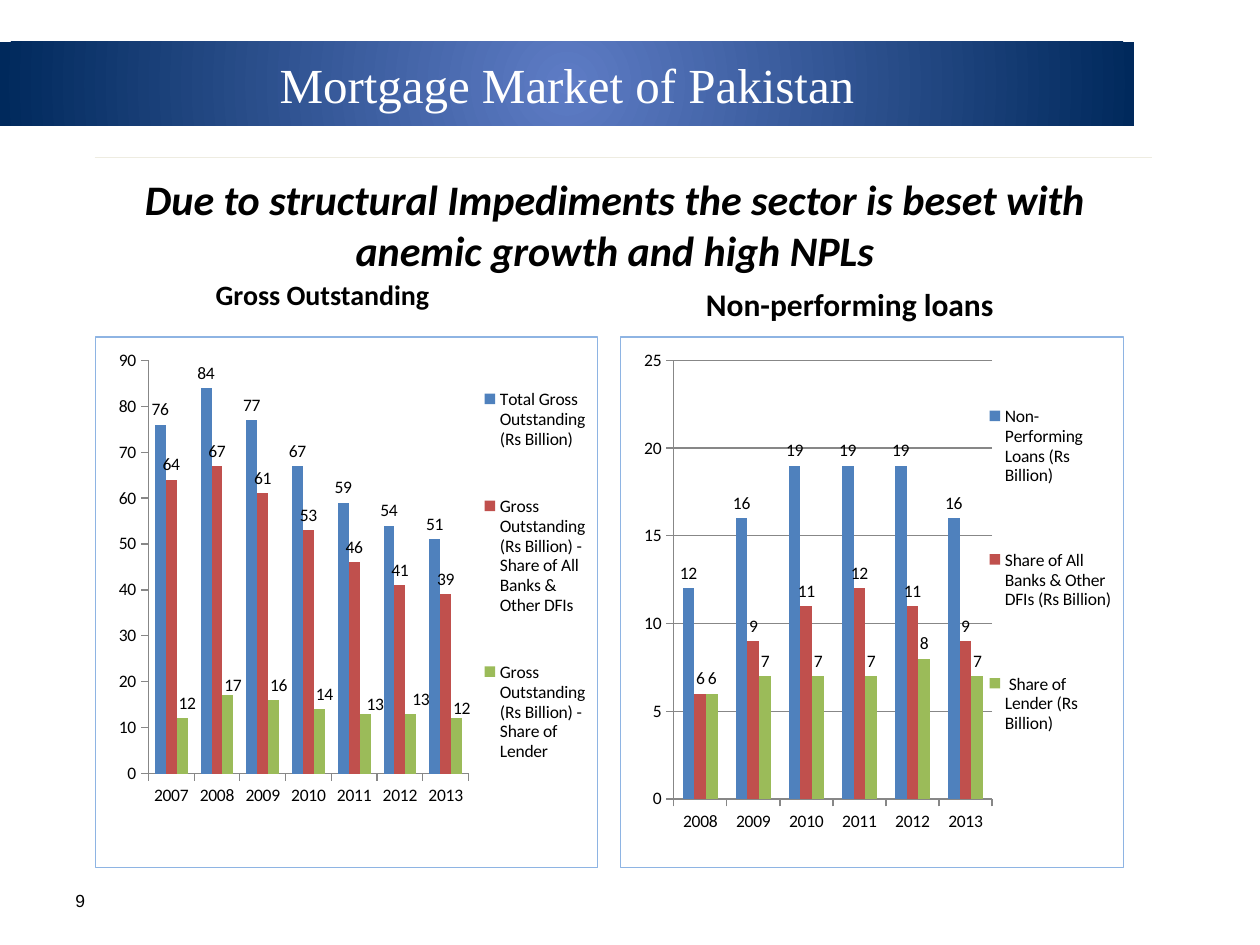
import pptx
import pptx.chart.data
import pptx.dml.color
import pptx.enum.chart
import pptx.enum.shapes
import pptx.enum.text
import pptx.oxml
import pptx.oxml.ns
import pptx.util
from lxml import etree
from pptx.util import Inches

COLORS = {
    "text": "000000", "white": "FFFFFF", "rule": "EEECE1", "axis": "878787",
    "border": "8EB4E3", "banner_center": "5E7CC5", "banner_edge": "00295C",
    "total": "4F81BD", "banks": "C0504D", "lender": "9BBB59",
}
SERIES_COLORS = ("total", "banks", "lender")
NAMESPACES = " ".join(pptx.oxml.ns.nsdecls(prefix) for prefix in ("a", "c"))
LEFT = pptx.enum.text.PP_ALIGN.LEFT
CENTER = pptx.enum.text.PP_ALIGN.CENTER


def color(name):
    return pptx.dml.color.RGBColor.from_string(COLORS[name])


def style_font(font, size, name="Calibri", tone="text", bold=False, italic=False):
    font.size = pptx.util.Pt(size)
    font.name = name
    font.color.rgb = color(tone)
    font.bold = bold
    font.italic = italic


def style_line(line, tone):
    line.color.rgb = color(tone)
    line.width = pptx.util.Pt(0.75)


def write_text(box, text, size, align=CENTER, middle=True, **font):
    frame = box.text_frame
    frame.word_wrap = True
    anchors = pptx.enum.text.MSO_ANCHOR
    frame.vertical_anchor = anchors.MIDDLE if middle else anchors.TOP
    frame.text = text
    paragraph = frame.paragraphs[0]
    paragraph.alignment = align
    style_font(paragraph.font, size, **font)


def add_text(page, area, text, size, **options):
    box = page.shapes.add_textbox(*map(Inches, area))
    write_text(box, text, size, **options)


def add_banner(page, text):
    banner = page.shapes.title
    banner.left, banner.top, banner.width, banner.height = map(Inches, (0, 0.33, 9, 0.67))
    banner.line.fill.background()
    banner.fill.gradient()
    for stop, tone in zip(banner.fill.gradient_stops, ("banner_center", "banner_edge")):
        stop.color.rgb = color(tone)
    linear = banner.element.spPr.find(".//" + pptx.oxml.ns.qn("a:lin"))
    linear.getparent().replace(linear, pptx.oxml.parse_xml(
        f'<a:path {NAMESPACES} path="circle">'
        '<a:fillToRect l="50000" t="50000" r="50000" b="50000"/></a:path>'))
    write_text(banner, text, 28, name="Times New Roman", tone="white")


def add_rule(page):
    rule = page.shapes.add_connector(
        pptx.enum.shapes.MSO_CONNECTOR.STRAIGHT, *map(Inches, (0.75, 1.25, 9.14, 1.25)))
    style_line(rule.line, "rule")
    etree.SubElement(rule.element.spPr, pptx.oxml.ns.qn("a:effectLst"))


def set_layout(parent, index, **settings):
    for old in parent.findall(pptx.oxml.ns.qn("c:layout")):
        parent.remove(old)
    values = "".join(f'<c:{key} val="{value}"/>' for key, value in settings.items())
    parent.insert(index, pptx.oxml.parse_xml(
        f"<c:layout {NAMESPACES}><c:manualLayout>{values}</c:manualLayout></c:layout>"))


def add_border(chart):
    chart.element.find(pptx.oxml.ns.qn("c:chart")).addnext(pptx.oxml.parse_xml(
        f'<c:spPr {NAMESPACES}><a:noFill/><a:ln w="9525"><a:solidFill>'
        f'<a:srgbClr val="{COLORS["border"]}"/></a:solidFill></a:ln></c:spPr>'))


def style_axes(chart, maximum, step, grid):
    for axis in (chart.category_axis, chart.value_axis):
        style_line(axis.format.line, "axis")
        axis.major_tick_mark = pptx.enum.chart.XL_TICK_MARK.OUTSIDE
    axis = chart.value_axis
    axis.minimum_scale = 0
    axis.maximum_scale = maximum
    axis.major_unit = step
    axis.tick_labels.number_format = "0"
    axis.tick_labels.number_format_is_linked = False
    axis.has_major_gridlines = grid
    if grid:
        style_line(axis.major_gridlines.format.line, "axis")


def shift_labels(series, offsets):
    for index, (x, y) in enumerate(offsets):
        label = series.points[index].data_label
        label.position = pptx.enum.chart.XL_LABEL_POSITION.OUTSIDE_END
        entry = series.data_labels._element.findall(pptx.oxml.ns.qn("c:dLbl"))[index]
        set_layout(entry, 1, x=x, y=y)


def add_columns(page, left, years, rows, gap, plot_size, legend, scale, grid):
    data = pptx.chart.data.CategoryChartData(number_format="0")
    data.categories = [str(year) for year in years]
    for name, values in rows:
        data.add_series(name, values)
    chart = page.shapes.add_chart(
        pptx.enum.chart.XL_CHART_TYPE.COLUMN_CLUSTERED,
        *map(Inches, (left, 2.67, 4, 4.22)), data).chart
    chart.has_title = False
    style_font(chart.font, 10)
    add_border(chart)
    style_axes(chart, *scale, grid)

    plot = chart.plots[0]
    plot.gap_width = gap
    plot.overlap = 0
    plot.vary_by_categories = False
    for series, tone in zip(plot.series, SERIES_COLORS):
        series.format.fill.solid()
        series.format.fill.fore_color.rgb = color(tone)
        labels = series.data_labels
        labels.show_value = True
        labels.number_format = "#,##0"
        labels.number_format_is_linked = False
        labels.position = pptx.enum.chart.XL_LABEL_POSITION.OUTSIDE_END

    plot_area = chart.element.find(".//" + pptx.oxml.ns.qn("c:plotArea"))
    set_layout(plot_area, 0, layoutTarget="inner", xMode="edge", yMode="edge",
               x=0.106, y=0.044, w=plot_size[0], h=plot_size[1])
    chart.has_legend = True
    chart.legend.position = pptx.enum.chart.XL_LEGEND_POSITION.RIGHT
    chart.legend.include_in_layout = False
    x, width, height = legend
    set_layout(chart.legend._element, 1, xMode="edge", yMode="edge",
               x=x, y=0.01, w=width, h=height)
    return chart


def main():
    deck = pptx.Presentation()
    deck.slide_width, deck.slide_height = Inches(10), Inches(7.5)
    page = deck.slides.add_slide(deck.slide_layouts[5])
    add_rule(page)
    add_text(page, (0.5, 6.95, 2.33, 0.4), "9", 10, align=LEFT, name="Arial")

    outstanding = add_columns(
        page, 0.75, range(2007, 2014), [
            ("Total Gross Outstanding (Rs Billion)", (76, 84, 77, 67, 59, 54, 51)),
            ("Gross Outstanding (Rs Billion) - Share of All Banks & Other DFIs",
             (64, 67, 61, 53, 46, 41, 39)),
            ("Gross Outstanding (Rs Billion) - Share of Lender",
             (12, 17, 16, 14, 13, 13, 12)),
        ], 116, (0.637, 0.779), (0.76, 0.23, 0.88), (90, 10), False)
    shift_labels(outstanding.plots[0].series[2], [
        (0.01, 0), (0.01, 0.01), (0.01, 0), (0.01, 0),
        (0.02, 0.01), (0.02, 0), (0.01, 0.01)])
    add_columns(
        page, 4.92, range(2008, 2014), [
            ("Non-Performing Loans (Rs Billion)", (12, 16, 19, 19, 19, 16)),
            ("Share of All Banks & Other DFIs (Rs Billion)", (6, 9, 11, 12, 11, 9)),
            (" Share of Lender (Rs Billion)", (6, 7, 7, 7, 8, 7)),
        ], 150, (0.633, 0.827), (0.73, 0.25, 0.86), (25, 5), True)

    add_text(page, (0.92, 2.17, 3.33, 0.33), "Gross Outstanding ", 16, bold=True)
    add_text(page, (5.08, 2.25, 3.33, 0.33), "Non-performing loans", 18, bold=True)
    add_text(page, (0.67, 1.33, 8.42, 0.91),
             "Due to structural Impediments the sector is beset with anemic growth and high NPLs",
             24, middle=False, bold=True, italic=True)
    add_banner(page, "Mortgage Market of Pakistan")
    deck.save("out.pptx")


if __name__ == "__main__":
    main()
